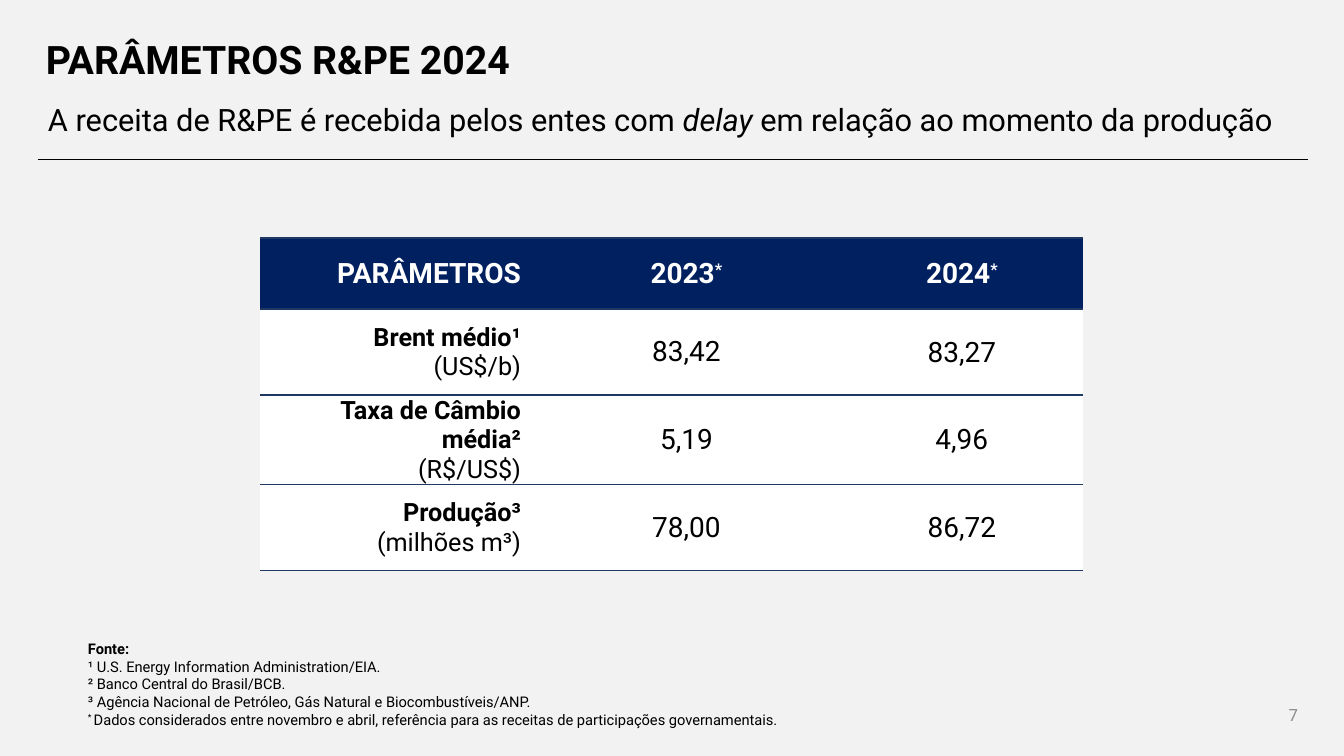
"""Builds the R&PE 2024 parameters slide."""
import lxml.etree
import pptx
import pptx.dml.color
import pptx.enum.shapes
import pptx.enum.text
import pptx.oxml
import pptx.oxml.ns
import pptx.util

PX = 914400 / 100.8
FONT = "Roboto"
BLACK, WHITE, NAVY, RULE = "000000", "FFFFFF", "002060", "203864"
PAGE, GREY = "F2F2F2", "8C8C8C"
ALIGN = pptx.enum.text.PP_ALIGN
ANCHOR = pptx.enum.text.MSO_ANCHOR
BOLD, ITALIC, RAISED = {"bold": True}, {"italic": True}, {"raised": True}

TEXTS = [
    {"box": (36, 22, 948, 80), "size": 28, "spacing": 0.9,
     "lines": [[("PARÂMETROS R&PE 2024", BOLD)]]},
    {"box": (38, 86, 1270, 59), "size": 22, "spacing": 1.2,
     "lines": [[("A receita de R&PE é recebida pelos entes com ", {}),
                ("delay ", ITALIC),
                ("em relação ao momento da produção", {})]]},
    {"box": (78, 635, 1169, 99), "size": 10.5, "anchor": ANCHOR.TOP,
     "lines": [
         [("Fonte:", BOLD)],
         [("¹ U.S. Energy Information Administration/EIA.", {})],
         [("² Banco Central do Brasil/BCB.", {})],
         [("³ Agência Nacional de Petróleo, Gás Natural e Biocombustíveis/ANP.", {})],
         [("* ", RAISED),
          ("Dados considerados entre novembro e abril, referência para as "
           "receitas de participações governamentais.", {})]]},
    {"box": (1211, 695, 97, 40), "size": 12, "color": GREY,
     "align": ALIGN.RIGHT, "lines": [[("7", {})]]},
]
DIVIDER = (38, 159, 1308, 159)

HEADINGS = ["PARÂMETROS", "2023", "2024"]
PARAMETERS = [
    ("Brent médio¹", "(US$/b)", "83,42", "83,27"),
    ("Taxa de Câmbio média²", "(R$/US$)", "5,19", "4,96"),
    ("Produção³", "(milhões m³)", "78,00", "86,72"),
]
TABLE_LEFT, TABLE_TOP = 260, 238
COLUMNS = [262, 60, 209, 50, 242]
HEADER_HEIGHT, ROW_HEIGHT = 71, 86
TIGHT, ROOMY = (1, 1, 1, 0), (15, 8, 15, 8)


def emu(px):
    """Turn px into EMU."""
    return round(px * PX)


def rgb(value):
    """Turn a hex string into a colour."""
    return pptx.dml.color.RGBColor.from_string(value)


def write(frame, lines, size, color=BLACK, align=ALIGN.LEFT, spacing=1.0):
    """Fill a text frame with lines of formatted runs."""
    for index, line in enumerate(lines):
        paragraph = frame.add_paragraph() if index else frame.paragraphs[0]
        paragraph.alignment, paragraph.line_spacing = align, spacing
        for text, style in line:
            run = paragraph.add_run()
            run.text = text
            values = {"name": FONT, "size": pptx.util.Pt(size),
                      "bold": style.get("bold", False),
                      "italic": style.get("italic", False)}
            for name, value in values.items():
                setattr(run.font, name, value)
            run.font.color.rgb = rgb(color)
            if style.get("raised"):
                run.font._element.set("baseline", "30000")


def add_text(slide, box, lines, size, anchor=ANCHOR.MIDDLE, **style):
    """Add a wrapped text box."""
    frame = slide.shapes.add_textbox(*map(emu, box)).text_frame
    frame.word_wrap, frame.vertical_anchor = True, anchor
    write(frame, lines, size, **style)


def add_divider(slide):
    """Draw the thin line under the headings."""
    divider = slide.shapes.add_connector(
        pptx.enum.shapes.MSO_CONNECTOR.STRAIGHT, *map(emu, DIVIDER))
    divider.line.color.rgb = rgb(BLACK)
    divider.line.width = pptx.util.Pt(0.5)
    lxml.etree.SubElement(divider._element.spPr, pptx.oxml.ns.qn("a:effectLst"))


def style_cell(cell, fill, margins):
    """Set the fill, margins and horizontal rules of a cell."""
    cell.fill.solid()
    cell.fill.fore_color.rgb = rgb(fill)
    cell.vertical_anchor = ANCHOR.MIDDLE
    for side, margin in zip(("left", "top", "right", "bottom"), margins):
        setattr(cell, f"margin_{side}", emu(margin))
    ruled = f'<a:solidFill><a:srgbClr val="{RULE}"/></a:solidFill>'
    borders = {"L": "<a:noFill/>", "R": "<a:noFill/>", "T": ruled, "B": ruled}
    for position, (side, paint) in enumerate(borders.items()):
        cell._tc.get_or_add_tcPr().insert(position, pptx.oxml.parse_xml(
            f'<a:ln{side} {pptx.oxml.ns.nsdecls("a")} w="12700">{paint}</a:ln{side}>'))


def add_parameters(slide):
    """Add the table, with a spacer column between the filled ones."""
    heights = [HEADER_HEIGHT] + [ROW_HEIGHT] * len(PARAMETERS)
    table = slide.shapes.add_table(
        len(heights), len(COLUMNS),
        *map(emu, (TABLE_LEFT, TABLE_TOP, sum(COLUMNS), sum(heights)))).table
    table.first_row = table.horz_banding = False
    for column, width in zip(table.columns, COLUMNS):
        column.width = emu(width)
    for row, height in zip(table.rows, heights):
        row.height = emu(height)

    header = [[[(HEADINGS[0], BOLD)]]]
    header += [[[(year, BOLD), ("*", {**BOLD, **RAISED})]] for year in HEADINGS[1:]]
    body = [[[[(label, BOLD)], [(unit, {})]]] + [[[(value, {})]] for value in values]
            for label, unit, *values in PARAMETERS]
    for r, entries in enumerate([header] + body):
        for c in range(len(COLUMNS)):
            style_cell(table.cell(r, c), WHITE if r else NAVY,
                       ROOMY if r and c == 2 else TIGHT)
        for c, lines in enumerate(entries):
            write(table.cell(r, 2 * c).text_frame, lines,
                  18 if r and c == 0 else 20, BLACK if r else WHITE,
                  ALIGN.CENTER if c else ALIGN.RIGHT)


def main():
    """Build and save the slide."""
    deck = pptx.Presentation()
    deck.slide_width, deck.slide_height = emu(1344), emu(756)
    slide = deck.slides.add_slide(deck.slide_layouts[6])
    slide.background.fill.solid()
    slide.background.fill.fore_color.rgb = rgb(PAGE)
    add_divider(slide)
    add_parameters(slide)
    for text in TEXTS:
        add_text(slide, **text)
    deck.save("out.pptx")


if __name__ == "__main__":
    main()
